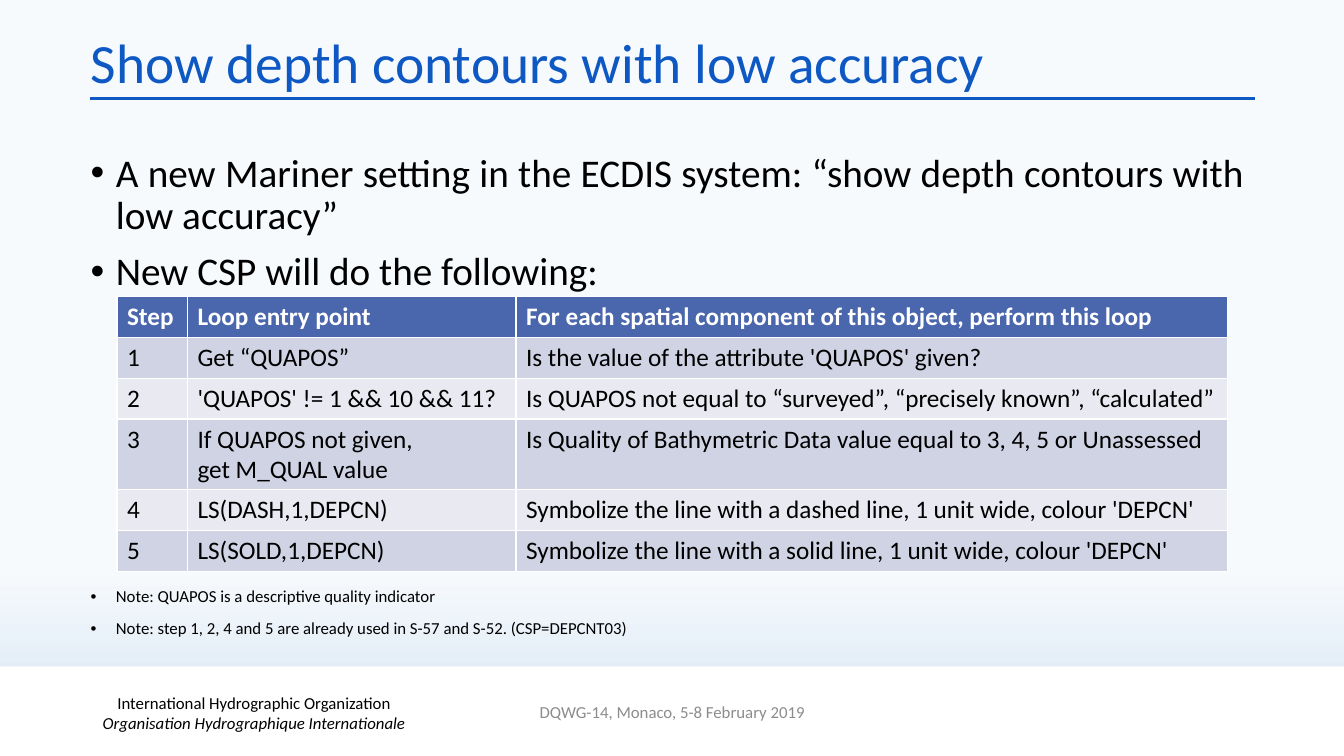
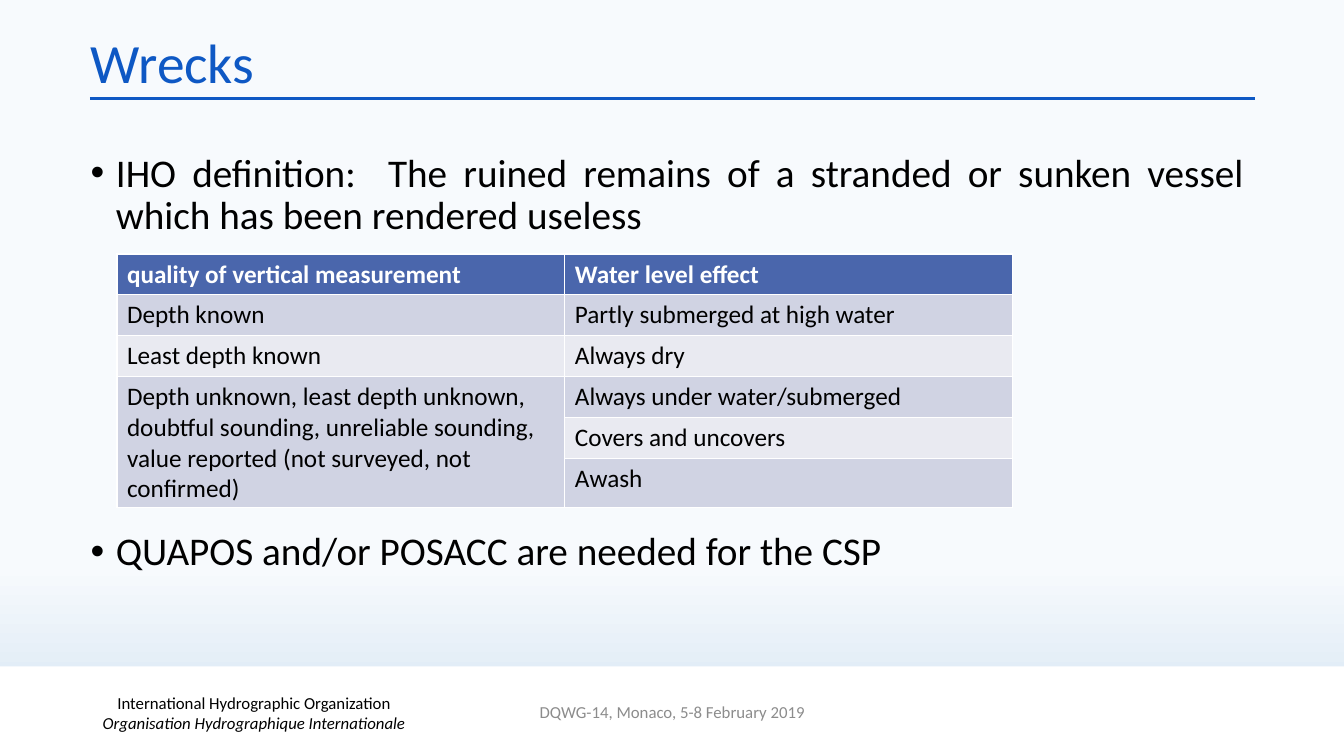
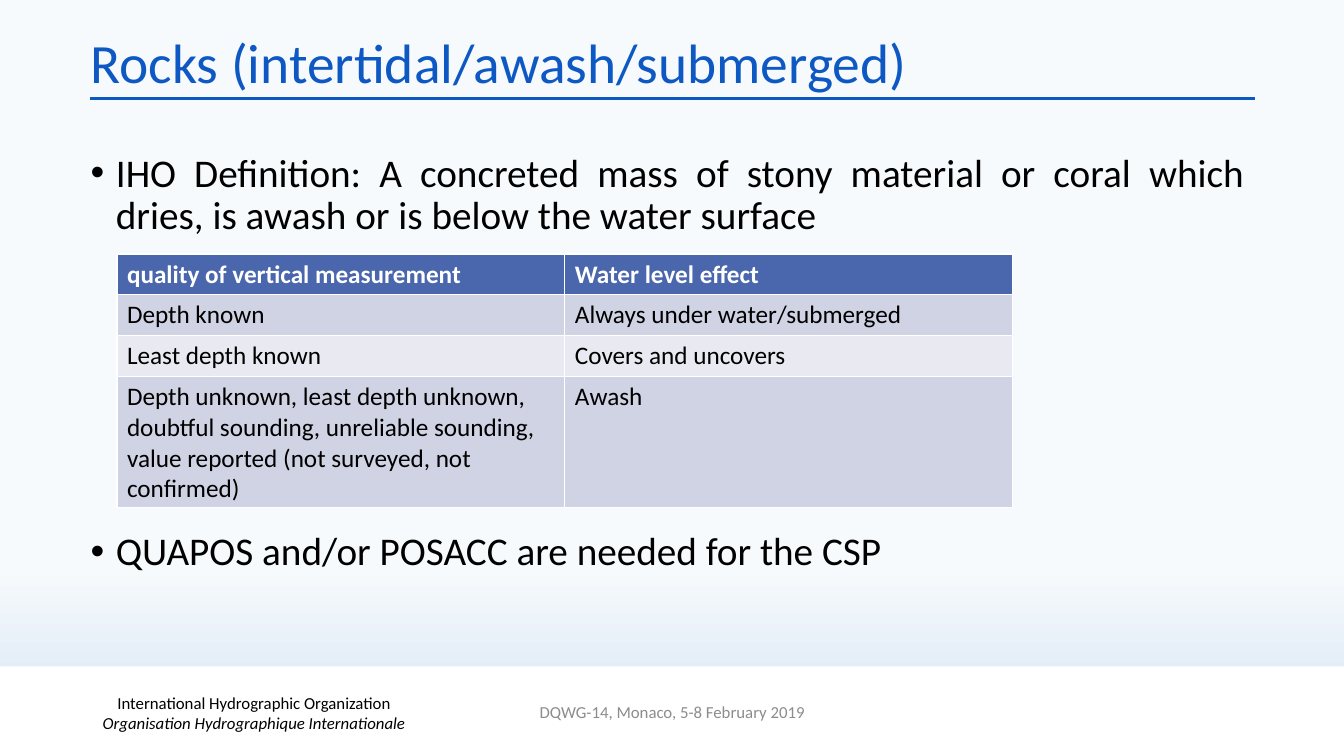
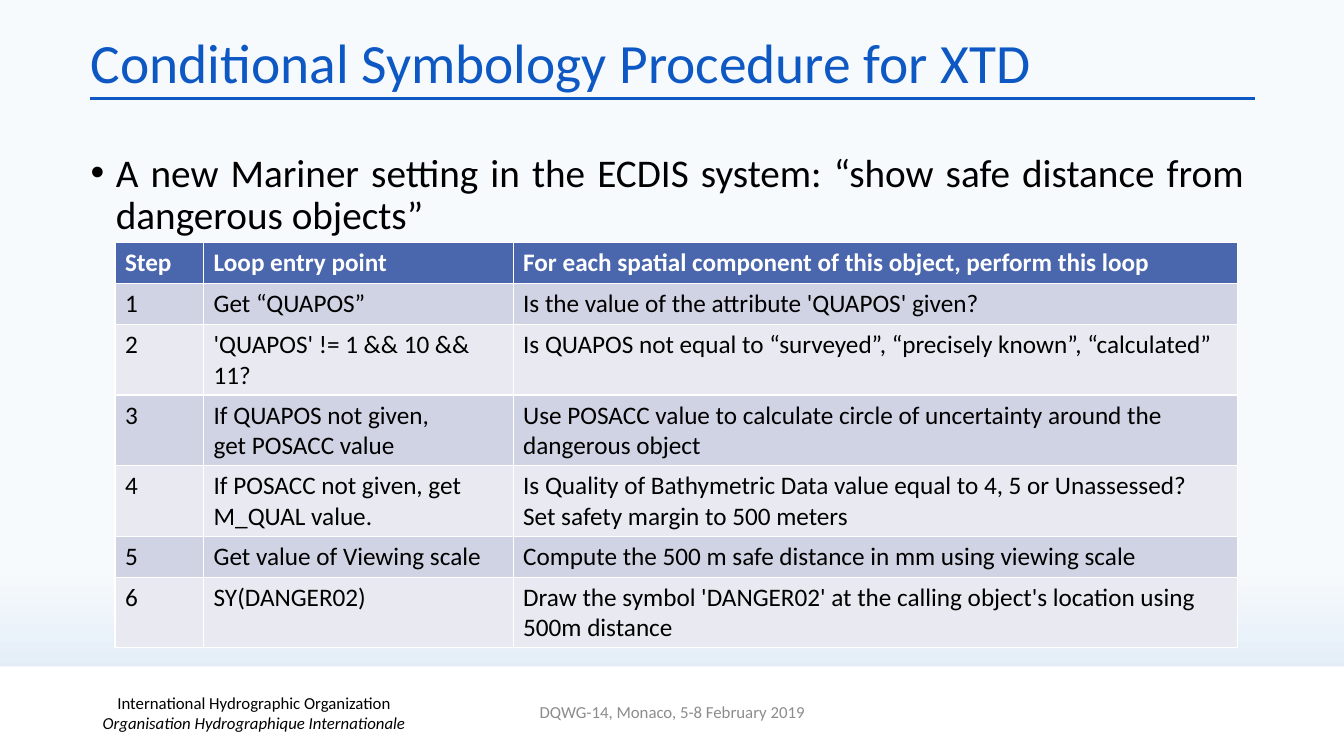
"""Four slides on chart symbology, with tables of steps and of depth quality."""
from dataclasses import dataclass

from lxml import etree
from pptx import Presentation
from pptx.dml.color import RGBColor
from pptx.enum.shapes import MSO_CONNECTOR, MSO_SHAPE
from pptx.enum.text import MSO_ANCHOR, MSO_AUTO_SIZE, PP_ALIGN
from pptx.oxml.ns import qn
from pptx.util import Inches, Pt

LINE, RECT = MSO_CONNECTOR.STRAIGHT, MSO_SHAPE.RECTANGLE
MID, FIXED = MSO_ANCHOR.MIDDLE, MSO_AUTO_SIZE.NONE
LEFT, CENTRE, FULL = PP_ALIGN.LEFT, PP_ALIGN.CENTER, PP_ALIGN.JUSTIFY


@dataclass(frozen=True)
class Theme:
    font: str = "Calibri"
    blue: str = "0E58C4"
    head: str = "4A66AC"
    odd: str = "D0D3E3"
    even: str = "E9EAF1"
    ink: str = "000000"
    grey: str = "8C8C8C"
    white: str = "FFFFFF"
    sky: str = "F7FAFD"
    sea: str = "D0E2F1"
    title: float = 39.6
    body: float = 28
    cell: float = 18
    note: float = 12
    gap: float = 10
    clear: float = 210


look = Theme()
deck = Presentation()
deck.slide_width, deck.slide_height = Inches(13.33), Inches(7.5)
COL, ROW = deck.slide_width / 100, deck.slide_height / 100


def box(x, y, w, h):
    return int(x * COL), int(y * ROW), int(w * COL), int(h * ROW)


def put(par, text, size, tint, bold=False, slant=False):
    run = par.add_run()
    run.text = text
    font = run.font
    font.name, font.size = look.font, Pt(size)
    font.bold, font.italic = bold, slant
    font.color.rgb = RGBColor.from_string(tint)


steps = ["Step", "Loop entry point", "For each spatial component of this object, perform this loop"]
quapos = [
    ["1", "Get “QUAPOS”", "Is the value of the attribute 'QUAPOS' given?"],
    ["2", "'QUAPOS' != 1 && 10 && 11?",
     "Is QUAPOS not equal to “surveyed”, “precisely known”, “calculated”"],
]
depth = ["quality of vertical measurement", "Water level effect"]
doubt = ("Depth unknown, least depth unknown, doubtful sounding, "
         "unreliable sounding, value reported (not surveyed, not confirmed)")
need = ("QUAPOS and/or POSACC are needed for the CSP", look.body, look.clear)

pages = [
    dict(
        title="Show depth contours with low accuracy",
        list=[
            ("A new Mariner setting in the ECDIS system: “show depth contours with low accuracy”",
             look.body, 0),
            ("New CSP will do the following:", look.body, look.gap),
            ("Note: QUAPOS is a descriptive quality indicator", look.note, look.clear),
            ("Note: step 1, 2, 4 and 5 are already used in S-57 and S-52. (CSP=DEPCNT03)",
             look.note, look.gap),
        ],
        spot=(8.7, 39.2), cols=(5.25, 24.45, 52.95), span=None,
        rows=[
            steps, *quapos,
            ["3", "If QUAPOS not given,\nget M_QUAL value",
             "Is Quality of Bathymetric Data value equal to 3, 4, 5 or Unassessed"],
            ["4", "LS(DASH,1,DEPCN)",
             "Symbolize the line with a dashed line, 1 unit wide, colour 'DEPCN'"],
            ["5", "LS(SOLD,1,DEPCN)",
             "Symbolize the line with a solid line, 1 unit wide, colour 'DEPCN'"],
        ],
    ),
    dict(
        title="Wrecks",
        list=[
            ("IHO definition:  The ruined remains of a stranded or sunken vessel "
             "which has been rendered useless", look.body, 0),
            need,
        ],
        spot=(8.7, 33.6), cols=(33.33, 33.33), span=(3, 5),
        rows=[
            depth,
            ["Depth known", "Partly submerged at high water"],
            ["Least depth known", "Always dry"],
            [doubt, "Always under water/submerged"],
            ["", "Covers and uncovers"],
            ["", "Awash"],
        ],
    ),
    dict(
        title="Rocks (intertidal/awash/submerged)",
        list=[
            ("IHO Definition: A concreted mass of stony material or coral which dries, "
             "is awash or is below the water surface", look.body, 0),
            need,
        ],
        spot=(8.7, 33.6), cols=(33.33, 33.33), span=None,
        rows=[
            depth,
            ["Depth known", "Always under water/submerged"],
            ["Least depth known", "Covers and uncovers"],
            [doubt, "Awash"],
        ],
    ),
    dict(
        title="Conditional Symbology Procedure for XTD",
        list=[
            ("A new Mariner setting in the ECDIS system: “show safe distance from "
             "dangerous objects”", look.body, 0),
        ],
        spot=(8.55, 32.1), cols=(6.6, 23.03, 53.93), span=None,
        rows=[
            steps, *quapos,
            ["3", "If QUAPOS not given,\nget POSACC value",
             "Use POSACC value to calculate circle of uncertainty around the dangerous object"],
            ["4", "If POSACC not given, get M_QUAL value.",
             "Is Quality of Bathymetric Data value equal to 4, 5 or Unassessed?\n"
             "Set safety margin to 500 meters"],
            ["5", "Get value of Viewing scale",
             "Compute the 500 m safe distance in mm using viewing scale"],
            ["6", "SY(DANGER02)",
             "Draw the symbol 'DANGER02' at the calling object's location using 500m distance"],
        ],
    ),
]

master, layout = deck.slide_master, deck.slide_layouts[1]
slides = [deck.slides.add_slide(layout) for _ in pages]

fill = master.background.fill
fill.gradient()
fill.gradient_angle = 270
for stop, spot, tint in zip(fill.gradient_stops, (0.75, 1), (look.sky, look.sea)):
    stop.position = spot
    stop.color.rgb = RGBColor.from_string(tint)

areas = box(6, 4, 73.65, 9.33), box(6, 19.6, 87.3, 66)
for holder, area in zip(layout.placeholders, areas):
    holder.left, holder.top, holder.width, holder.height = area

shapes = slides[0].shapes
left, top, wide, _ = box(6.68, 13.07, 86.7, 0)
rule = shapes.add_connector(LINE, left, top, left + wide, top)
rule.line.color.rgb = RGBColor.from_string(look.blue)
rule.line.width = Pt(2.25)
etree.SubElement(rule.element.spPr, qn("a:effectLst"))

band = shapes.add_shape(RECT, *box(0, 88.13, 100, 11.87))
band.shadow.inherit = False
band.fill.solid()
band.fill.fore_color.rgb = RGBColor.from_string(look.white)
band.line.fill.background()

owner = shapes.add_textbox(*box(2.03, 91.6, 33.75, 5.33))
owner.text_frame.word_wrap = True
owner.text_frame.vertical_anchor = MID
par = owner.text_frame.paragraphs[0]
par.alignment = CENTRE
put(par, "International Hydrographic Organization", look.note, look.ink)
par.add_line_break()
put(par, "Organisation Hydrographique Internationale", look.note, look.ink, slant=True)

for mark, item in enumerate((rule, band, owner), 20):
    item.element.xpath(".//p:cNvPr")[0].set("id", str(mark))
    master.shapes.element.append(item.element)

for slide, page in zip(slides, pages):
    title, body = slide.placeholders
    frame = title.text_frame
    frame.auto_size, frame.vertical_anchor = FIXED, MID
    par = frame.paragraphs[0]
    par.alignment, par.line_spacing = LEFT, 0.9
    put(par, page["title"], look.title, look.blue)

    frame = body.text_frame
    frame.auto_size = FIXED
    for spot, (text, size, gap) in enumerate(page["list"]):
        par = frame.add_paragraph() if spot else frame.paragraphs[0]
        props = par._p.get_or_add_pPr()
        props.set("marL", str(Inches(0.25)))
        props.set("indent", str(-Inches(0.25)))
        par.alignment, par.line_spacing = FULL, 0.9
        par.space_before = Pt(gap)
        put(par, text, size, look.ink)

    foot = slide.shapes.add_textbox(*box(33.15, 91.47, 33.75, 5.33))
    foot.text_frame.word_wrap = True
    foot.text_frame.vertical_anchor = MID
    par = foot.text_frame.paragraphs[0]
    par.alignment = CENTRE
    put(par, "DQWG-14, Monaco, 5-8 February 2019", look.note, look.grey)

    rows, cols = page["rows"], page["cols"]
    area = box(*page["spot"], sum(cols), 5.41 * len(rows))
    table = slide.shapes.add_table(len(rows), len(cols), *area).table
    table.horz_banding = False
    for col, wide in zip(table.columns, cols):
        col.width = int(wide * COL)
    for r, row in enumerate(rows):
        shade = (look.odd if r % 2 else look.even) if r else look.head
        for c, text in enumerate(row):
            cell = table.cell(r, c)
            cell.fill.solid()
            cell.fill.fore_color.rgb = RGBColor.from_string(shade)
            for n, part in enumerate(text.split("\n") if text else []):
                frame = cell.text_frame
                par = frame.add_paragraph() if n else frame.paragraphs[0]
                put(par, part, look.cell, look.ink if r else look.white, bold=not r)
    if page["span"]:
        first, last = page["span"]
        table.cell(first, 0).merge(table.cell(last, 0))

deck.save("out.pptx")
